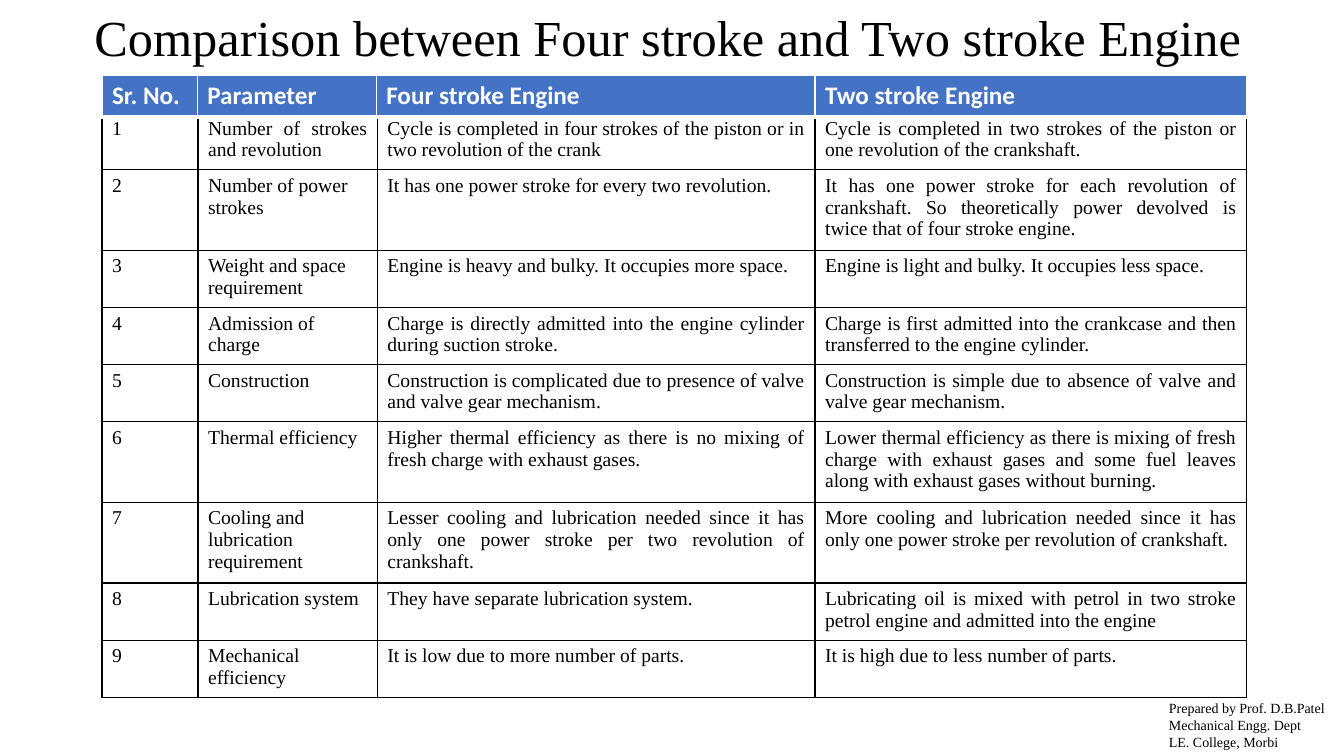
from lxml import etree
from pptx import Presentation
from pptx.dml.color import RGBColor
from pptx.enum.text import PP_ALIGN
from pptx.oxml.ns import qn
from pptx.util import Cm, Pt

LEFT, CENTER, JUSTIFY = PP_ALIGN.LEFT, PP_ALIGN.CENTER, PP_ALIGN.JUSTIFY
BLACK, WHITE, BLUE = "000000", "FFFFFF", "4472C4"
SERIF, SANS = "Times New Roman", "Calibri"

TABLE_LEFT = 2.57
HEADER_TOP, HEADER_HEIGHT = 1.91, 1.04
FIRST_ROW_TOP = 2.84
TWO_LINES, THREE_LINES = 1.44, 2.03
HEADER_WIDTHS = (2.4, 4.51, 11.06, 10.88)
ROW_WIDTHS = (2.42, 4.52, 11.03, 10.88)

HEADINGS = ("Sr. No.", "Parameter", "Four stroke Engine", "Two stroke Engine")

# Row height, alignment of the parameter, parameter, four stroke, two stroke
COMPARISONS = [
    (TWO_LINES, JUSTIFY, "Number of strokes and revolution",
     "Cycle is completed in four strokes of the piston or in two revolution of the crank",
     "Cycle is completed in two strokes of the piston or one revolution of the crankshaft."),
    (THREE_LINES, LEFT, "Number of power strokes",
     "It has one power stroke for every two revolution.",
     "It has one power stroke for each revolution of crankshaft. "
     "So theoretically power devolved is twice that of four stroke engine."),
    (TWO_LINES, LEFT, "Weight and space requirement",
     "Engine is heavy and bulky. It occupies more space.",
     "Engine is light and bulky. It occupies less space."),
    (TWO_LINES, LEFT, "Admission of charge",
     "Charge is directly admitted into the engine cylinder during suction stroke.",
     "Charge is first admitted into the crankcase and then transferred to the engine cylinder."),
    (TWO_LINES, JUSTIFY, "Construction ",
     "Construction is complicated due to presence of valve and valve gear mechanism.",
     "Construction is simple due to absence of valve and valve gear mechanism."),
    (THREE_LINES, JUSTIFY, "Thermal efficiency",
     "Higher thermal efficiency as there is no mixing of fresh charge with exhaust gases.",
     "Lower thermal efficiency as there is mixing of fresh charge with exhaust gases "
     "and some fuel leaves along with exhaust gases without burning."),
    (THREE_LINES, LEFT, "Cooling and lubrication requirement",
     "Lesser cooling and lubrication needed since it has only one power stroke "
     "per two revolution of crankshaft.",
     "More cooling and lubrication needed since it has only one power stroke "
     "per revolution of crankshaft."),
    (TWO_LINES, JUSTIFY, "Lubrication system",
     "They have separate lubrication system.",
     "Lubricating oil is mixed with petrol in two stroke petrol engine "
     "and admitted into the engine"),
    (TWO_LINES, JUSTIFY, "Mechanical efficiency ",
     "It is low due to more number of parts.",
     "It is high due to less number of parts."),
]


def rgb(color):
    return RGBColor.from_string(color)


def write(frame, text, size, font=SERIF, color=BLACK, bold=False, align=LEFT):
    frame.text = text
    for paragraph in frame.paragraphs:
        paragraph.alignment = align
        for run in paragraph.runs:
            run.font.name = font
            run.font.size = Pt(size)
            run.font.bold = bold
            run.font.color.rgb = rgb(color)


def add_text(slide, box, text, size, align=LEFT):
    frame = slide.shapes.add_textbox(*map(Cm, box)).text_frame
    frame.word_wrap = True
    write(frame, text, size, align=align)


def set_borders(cell, color, bottom_width):
    """Draw 1 pt cell borders, with the bottom one in its own width."""
    properties = cell._tc.get_or_add_tcPr()
    sides = (("a:lnL", 1), ("a:lnR", 1), ("a:lnT", 1), ("a:lnB", bottom_width))
    for position, (side, width) in enumerate(sides):
        line = etree.Element(qn(side), w=str(Pt(width)))
        fill = etree.SubElement(line, qn("a:solidFill"))
        etree.SubElement(fill, qn("a:srgbClr"), val=color)
        properties.insert(position, line)


def add_strip(slide, top, height, widths, border, bottom_width=1):
    """Add a one-row table and return its cells."""
    frame = slide.shapes.add_table(1, len(widths), Cm(TABLE_LEFT), Cm(top),
                                   Cm(sum(widths)), Cm(height))
    table = frame.table
    table.first_row = table.horz_banding = False
    for column, width in zip(table.columns, widths):
        column.width = Cm(width)
    cells = list(table.rows[0].cells)
    for cell in cells:
        cell.fill.background()
        set_borders(cell, border, bottom_width)
    return cells


def add_comparisons(slide):
    top = FIRST_ROW_TOP
    for number, (height, name_align, *texts) in enumerate(COMPARISONS, 1):
        cells = add_strip(slide, top, height, ROW_WIDTHS, BLACK)
        aligns = (JUSTIFY, name_align, JUSTIFY, JUSTIFY)
        for cell, text, align in zip(cells, (str(number), *texts), aligns):
            write(cell.text_frame, text, 14, align=align)
        top += height


def add_header(slide):
    cells = add_strip(slide, HEADER_TOP, HEADER_HEIGHT, HEADER_WIDTHS, WHITE, 3)
    for cell, heading in zip(cells, HEADINGS):
        cell.fill.solid()
        cell.fill.fore_color.rgb = rgb(BLUE)
        write(cell.text_frame, heading, 18, SANS, WHITE, bold=True)


def main():
    deck = Presentation()
    deck.slide_width, deck.slide_height = Cm(33.87), Cm(19.05)
    slide = deck.slides.add_slide(deck.slide_layouts[6])
    add_text(slide, (1.35, 0.03, 31.29, 1.8),
             "Comparison between Four stroke and Two stroke Engine ", 36, CENTER)
    add_comparisons(slide)
    add_header(slide)
    add_text(slide, (29.21, 17.5, 4.65, 1.55),
             "Prepared by Prof. D.B.Patel\nMechanical Engg. Dept\nLE. College, Morbi", 10)
    deck.save("out.pptx")


if __name__ == "__main__":
    main()
